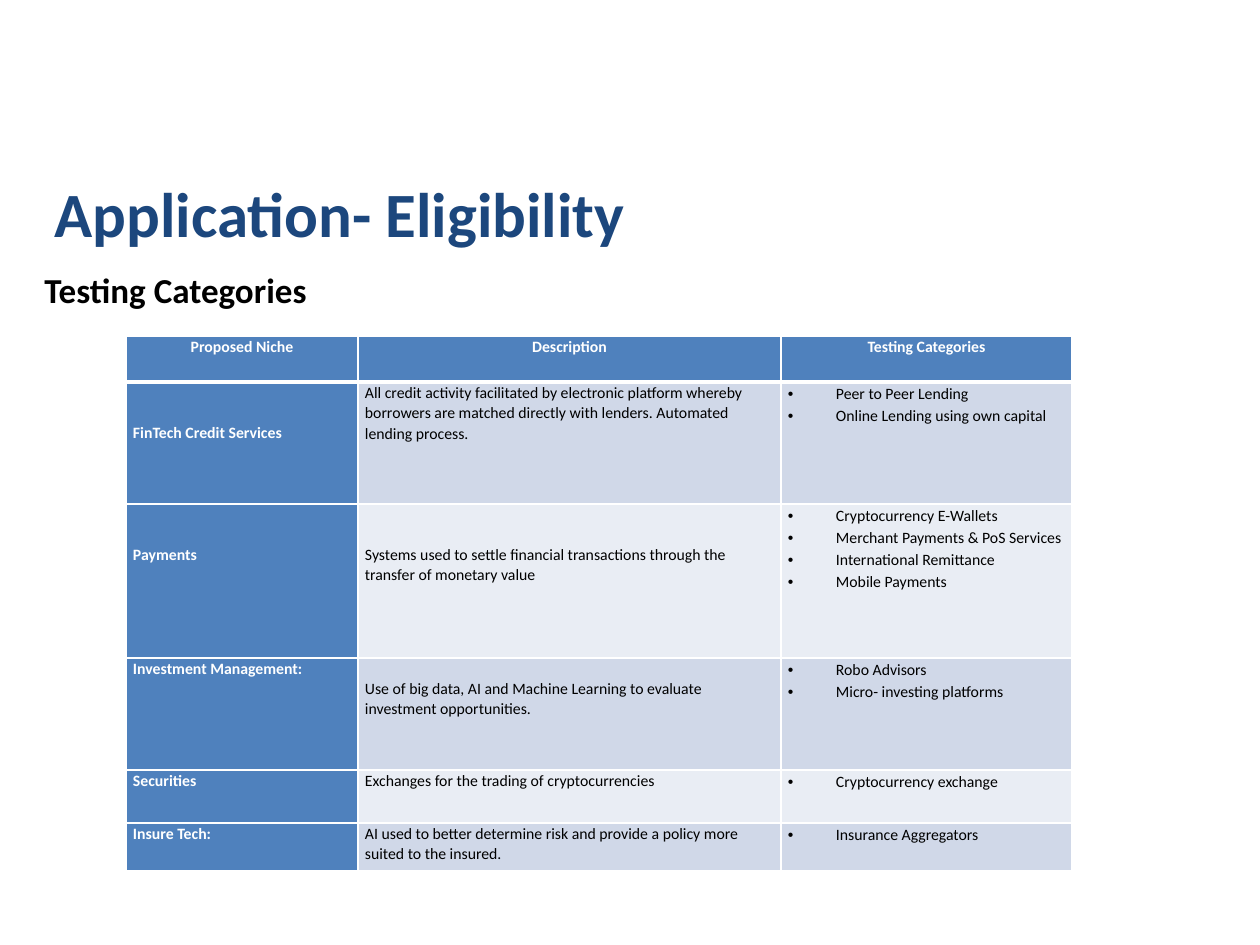
from lxml.etree import SubElement
from pptx import Presentation
from pptx.dml.color import RGBColor
from pptx.enum.text import MSO_ANCHOR as Anchor, MSO_AUTO_SIZE as Auto, PP_ALIGN as Align
from pptx.oxml.ns import qn
from pptx.util import Emu, Pt

COLORS = {
    "title": "1C477D", "text": "000000", "white": "FFFFFF",
    "header": "4F81BD", "band_dark": "D0D8E8", "band_light": "E9EDF4",
}
COL_WIDTHS = [232, 423, 291]
ROW_HEIGHTS = [46, 122, 154, 112, 53, 48]
LINE = 20
HEADERS = ["Proposed Niche", "Description", "Testing Categories"]
ROWS = [
    ("FinTech Credit Services", 2,
     "All credit activity facilitated by electronic platform whereby borrowers are "
     "matched directly with lenders. Automated lending process.", 0,
     ["Peer to Peer Lending", "Online Lending using own capital"]),
    ("Payments", 2,
     "Systems used to settle financial transactions through the transfer of monetary value", 2,
     ["Cryptocurrency E-Wallets", "Merchant Payments & PoS Services",
      "International Remittance", "Mobile Payments"]),
    ("Investment Management:", 0,
     "Use of big data, AI and Machine Learning to evaluate investment opportunities.", 1,
     ["Robo Advisors", "Micro- investing platforms"]),
    ("Securities", 0, "Exchanges for the trading of cryptocurrencies", 0,
     ["Cryptocurrency exchange"]),
    ("Insure Tech:", 0,
     "AI used to better determine risk and provide a policy more suited to the insured.", 0,
     ["Insurance Aggregators"]),
]


def px(n):
    return Emu(round(n * 914400 / 126))


def rgb(name):
    return RGBColor.from_string(COLORS[name])


class Deck:
    font = "Calibri"

    def __init__(self, prs):
        self.s = prs.slides.add_slide(prs.slide_layouts[5])

    def run(self, p, text, size, color, bold):
        r = p.add_run()
        r.text = text
        r.font.name = self.font
        r.font.size = Pt(size)
        r.font.bold = bold
        r.font.color.rgb = rgb(color)

    def title(self, x, y, w, h, text):
        sp = self.s.shapes.title
        sp.left, sp.top, sp.width, sp.height = map(px, (x, y, w, h))
        tf = sp.text_frame
        tf.auto_size = Auto.NONE
        tf.vertical_anchor = Anchor.MIDDLE
        p = tf.paragraphs[0]
        p.alignment = Align.LEFT
        self.run(p, text, 36, "title", True)

    def text(self, x, y, w, h, text):
        tf = self.s.shapes.add_textbox(*map(px, (x, y, w, h))).text_frame
        tf.word_wrap = True
        tf.auto_size = Auto.SHAPE_TO_FIT_TEXT
        self.run(tf.paragraphs[0], text, 20, "text", True)

    def table(self, x, y, widths, heights):
        frame = self.s.shapes.add_table(
            len(heights), len(widths), px(x), px(y), px(sum(widths)), px(sum(heights)))
        table = frame.table
        table.first_row = table.horz_banding = False
        for col, w in zip(table.columns, widths):
            col.width = px(w)
        for row, h in zip(table.rows, heights):
            row.height = px(h)
        return table

    def borders(self, cell, top, bottom):
        tc_pr = cell._tc.get_or_add_tcPr()
        for side, width in zip("LRTB", (1, 1, top, bottom)):
            ln = SubElement(tc_pr, qn(f"a:ln{side}"), w=str(Pt(width)))
            fill = SubElement(ln, qn("a:solidFill"))
            SubElement(fill, qn("a:srgbClr"), val=COLORS["white"])

    def bullet(self, p):
        p_pr = p._p.get_or_add_pPr()
        p_pr.set("marL", str(px(48)))
        p_pr.set("indent", str(-px(48)))
        SubElement(p_pr, qn("a:buFont"), typeface="Arial")
        SubElement(p_pr, qn("a:buChar"), char="•")

    def cell(self, cell, lines, fill, color="text", bold=False, align=Align.LEFT,
             offset=0, bullets=False, top=1, bottom=1):
        self.borders(cell, top, bottom)
        cell.fill.solid()
        cell.fill.fore_color.rgb = rgb(fill)
        cell.margin_left = cell.margin_right = px(7)
        cell.margin_top, cell.margin_bottom = px(offset * LINE), 0
        cell.vertical_anchor = Anchor.TOP
        tf = cell.text_frame
        for i, line in enumerate(lines):
            p = tf.add_paragraph() if i else tf.paragraphs[0]
            p.alignment = align
            p.line_spacing = 1.15 if bullets else 1.07
            if bullets:
                self.bullet(p)
            self.run(p, line, 9, color, bold)


def main():
    prs = Presentation()
    prs.slide_width, prs.slide_height = px(1260), px(945)
    deck = Deck(prs)
    deck.title(42, 181, 620, 63, "Application- Eligibility")
    table = deck.table(126, 336, COL_WIDTHS, ROW_HEIGHTS)
    for c, header in enumerate(HEADERS):
        deck.cell(table.cell(0, c), [header], "header", "white", True, Align.CENTER, bottom=3)
    for r, (niche, niche_offset, desc, desc_offset, categories) in enumerate(ROWS, 1):
        band = "band_dark" if r % 2 else "band_light"
        top = 3 if r == 1 else 1
        deck.cell(table.cell(r, 0), [niche], "header", "white", True,
                  offset=niche_offset, top=top)
        deck.cell(table.cell(r, 1), [desc], band, offset=desc_offset, top=top)
        deck.cell(table.cell(r, 2), categories, band, bullets=True, top=top)
    deck.text(32, 262, 567, 55, "Testing Categories")
    prs.save("out.pptx")


if __name__ == "__main__":
    main()
